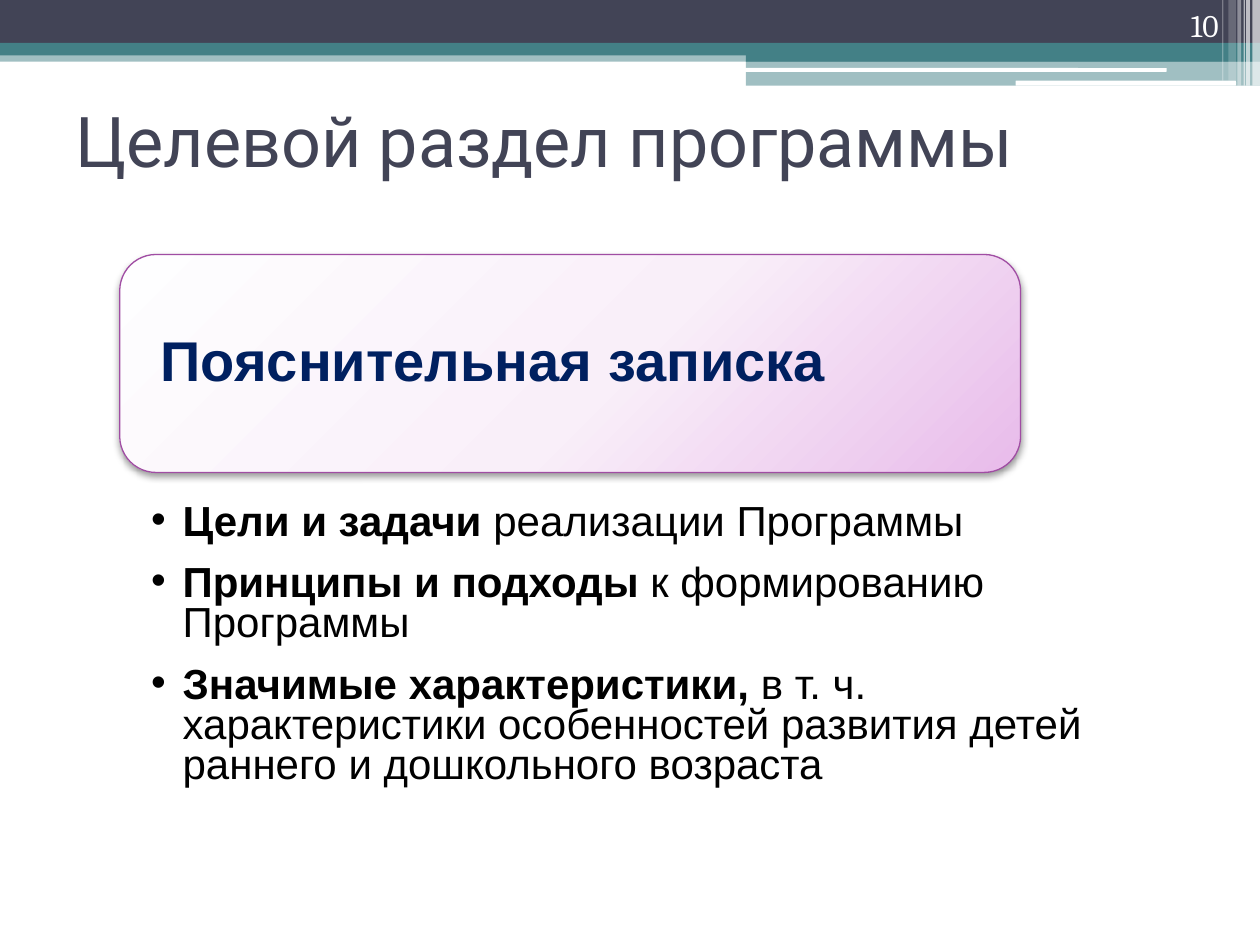
from lxml.etree import SubElement
from pptx import Presentation
from pptx.dml.color import RGBColor
from pptx.enum.shapes import MSO_SHAPE
from pptx.enum.text import MSO_ANCHOR, PP_ALIGN
from pptx.oxml import parse_xml
from pptx.oxml.ns import nsdecls, qn
from pptx.util import Inches, Pt

SLIDE_WIDTH = Inches(10)
SLIDE_HEIGHT = Inches(7.5)
COLUMNS, ROWS = 1000, 750

NAVY, TEAL, WHITE, BLACK = "424456", "438086", "FFFFFF", "000000"
PURPLE, HEADING_BLUE = "A04DA3", "002060"

BANDS = [
    (0, 40, 1000, 9, TEAL, 50),
    (0, 0, 1000, 34, NAVY, 100),
    (0, 34, 1000, 10, TEAL, 100),
    (592, 39, 408, 10, TEAL, 100),
    (592, 48, 408, 20, TEAL, 50),
]
WHITE_BARS = [(591, 54, 335, 3), (806, 64, 175, 4)]
STRIPES = [
    (994, 6, 68, 65),
    (989, 3, 68, 65),
    (987, 1, 68, 60),
    (982, 3, 68, 40),
    (975, 6, 64, 20),
    (970, 1, 64, 30),
]
GRADIENT_STOPS = [(0, "FEFEFF"), (55, "F9EFF9"), (100, "E8BBEA")]
BULLETS = [
    ("Цели и задачи ", "реализации Программы"),
    ("Принципы и подходы ", "к формированию Программы"),
    ("Значимые характеристики, ",
     "в т. ч. характеристики особенностей развития детей раннего и дошкольного возраста"),
]


def color(value):
    return RGBColor.from_string(value)


def grid(left, top, width, height):
    column, row = SLIDE_WIDTH / COLUMNS, SLIDE_HEIGHT / ROWS
    return [round(left * column), round(top * row), round(width * column), round(height * row)]


def place(shape, *cells):
    shape.left, shape.top, shape.width, shape.height = grid(*cells)


def add_block(slide, cells, fill, opacity=100, kind=MSO_SHAPE.RECTANGLE):
    shape = slide.shapes.add_shape(kind, *grid(*cells))
    shape.shadow.inherit = False
    shape.line.fill.background()
    shape.fill.solid()
    shape.fill.fore_color.rgb = color(fill)
    if opacity < 100:
        fill_color = shape._element.spPr.find(qn("a:solidFill"))[0]
        SubElement(fill_color, qn("a:alpha")).set("val", str(opacity * 1000))
    return shape


def add_run(paragraph, text, font, size, text_color, bold=False):
    run = paragraph.add_run()
    run.text = text
    run.font.name = font
    run.font.size = Pt(size)
    run.font.bold = bold
    run.font.color.rgb = color(text_color)


def format_frame(frame, anchor, side, top=0, bottom=0):
    frame.word_wrap = True
    frame.vertical_anchor = anchor
    frame.margin_left = frame.margin_right = Inches(side)
    frame.margin_top, frame.margin_bottom = Inches(top), Inches(bottom)


def add_bullet(paragraph):
    properties = paragraph._p.get_or_add_pPr()
    properties.set("marL", str(Inches(0.25)))
    properties.set("indent", str(-Inches(0.25)))
    SubElement(properties, qn("a:buFont")).set("typeface", "Arial")
    SubElement(properties, qn("a:buChar")).set("char", "•")


def apply_gradient(shape):
    stops = "".join(
        f'<a:gs pos="{position * 1000}"><a:srgbClr val="{value}"/></a:gs>'
        for position, value in GRADIENT_STOPS
    )
    gradient = parse_xml(
        f'<a:gradFill {nsdecls("a")} rotWithShape="1"><a:gsLst>{stops}</a:gsLst>'
        '<a:path path="circle"><a:fillToRect l="-40000" t="-90000" r="140000" b="190000"/>'
        '</a:path></a:gradFill>'
    )
    properties = shape._element.spPr
    properties.replace(properties.find(qn("a:solidFill")), gradient)


def apply_shadow(shape):
    effects = shape._element.spPr.find(qn("a:effectLst"))
    effects.append(parse_xml(
        f'<a:outerShdw {nsdecls("a")} blurRad="{Pt(4.1)}" dist="{Pt(2)}" dir="5400000" '
        f'rotWithShape="0"><a:srgbClr val="{BLACK}"><a:alpha val="40000"/></a:srgbClr>'
        '</a:outerShdw>'
    ))


def add_header(slide):
    for *cells, fill, opacity in BANDS:
        add_block(slide, cells, fill, opacity)
    for cells in WHITE_BARS:
        add_block(slide, cells, WHITE, kind=MSO_SHAPE.ROUNDED_RECTANGLE)
    for left, width, height, opacity in STRIPES:
        add_block(slide, (left, 0, width, height), WHITE, opacity)


def add_title(slide, text):
    title = slide.shapes.title
    place(title, 50, 52, 900, 118)
    format_frame(title.text_frame, MSO_ANCHOR.MIDDLE, 0.1, 0.05, 0.05)
    paragraph = title.text_frame.paragraphs[0]
    paragraph.alignment = PP_ALIGN.LEFT
    add_run(paragraph, text, "Roboto", 40, NAVY)


def add_page_number(slide, text):
    box = slide.shapes.add_textbox(*grid(894, 0, 83, 40))
    format_frame(box.text_frame, MSO_ANCHOR.BOTTOM, 0.1, 0.05, 0.05)
    paragraph = box.text_frame.paragraphs[0]
    paragraph.alignment = PP_ALIGN.RIGHT
    add_run(paragraph, text, "Cambria", 18, WHITE)


def add_details(slide):
    panel = add_block(slide, (50, 298, 900, 341), WHITE, 90)
    frame = panel.text_frame
    format_frame(frame, MSO_ANCHOR.TOP, 0.7, 1.02, 0.19)
    for index, (lead, rest) in enumerate(BULLETS):
        paragraph = frame.add_paragraph() if index else frame.paragraphs[0]
        add_bullet(paragraph)
        paragraph.alignment = PP_ALIGN.LEFT
        paragraph.line_spacing = 0.8
        paragraph.space_after = Pt(12)
        add_run(paragraph, lead, "Arial", 24, BLACK, bold=True)
        add_run(paragraph, rest, "Arial", 24, BLACK)


def add_heading_card(slide, text):
    card = add_block(slide, (95, 202, 715, 173), WHITE, kind=MSO_SHAPE.ROUNDED_RECTANGLE)
    apply_gradient(card)
    apply_shadow(card)
    card.line.color.rgb = color(PURPLE)
    card.line.width = Pt(0.75)
    format_frame(card.text_frame, MSO_ANCHOR.MIDDLE, 0.24)
    paragraph = card.text_frame.paragraphs[0]
    paragraph.alignment = PP_ALIGN.LEFT
    paragraph.line_spacing = 0.9
    add_run(paragraph, text, "Arial", 32, HEADING_BLUE, bold=True)


def main():
    presentation = Presentation()
    presentation.slide_width, presentation.slide_height = SLIDE_WIDTH, SLIDE_HEIGHT
    slide = presentation.slides.add_slide(presentation.slide_layouts[5])
    add_header(slide)
    add_title(slide, "Целевой раздел программы")
    add_page_number(slide, "10")
    add_details(slide)
    add_heading_card(slide, "Пояснительная записка")
    presentation.save("out.pptx")


if __name__ == "__main__":
    main()
